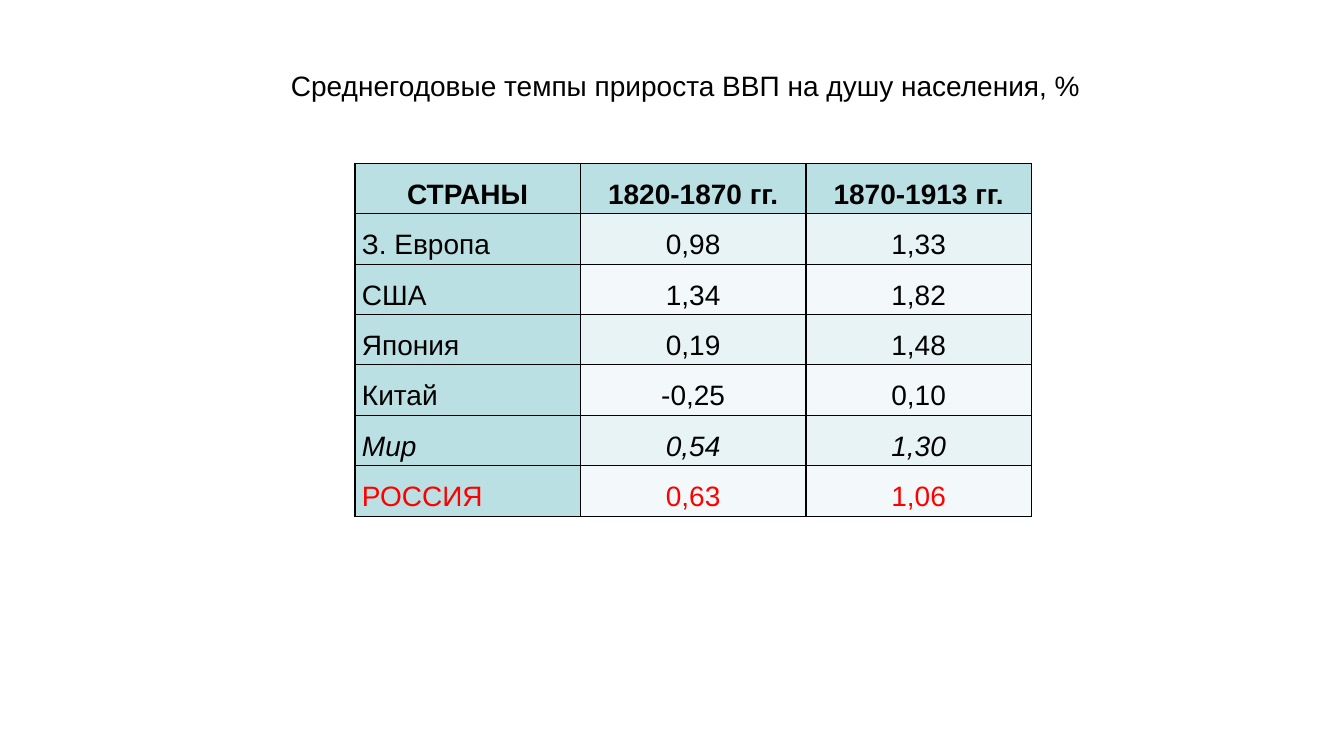
from lxml.etree import SubElement
from pptx import Presentation
from pptx.dml.color import RGBColor
from pptx.enum.text import MSO_ANCHOR, PP_ALIGN
from pptx.oxml.ns import qn
from pptx.util import Inches, Pt

ROWS = [
    ("СТРАНЫ", "1820-1870 гг.", "1870-1913 гг."),
    ("З. Европа", "0,98", "1,33"),
    ("США", "1,34", "1,82"),
    ("Япония", "0,19", "1,48"),
    ("Китай", "-0,25", "0,10"),
    ("Мир", "0,54", "1,30"),
    ("РОССИЯ", "0,63", "1,06"),
]
HEAD, ODD, EVEN = "BBE0E3", "E7F3F4", "F3F9FA"
BLACK, RED = "000000", "FF0000"


def rgb(value):
    return RGBColor.from_string(value)


def write(p, text, align=PP_ALIGN.CENTER, color=BLACK, bold=False, italic=False):
    p.text = text
    p.alignment = align
    p.font.name = "Arial"
    p.font.size = Pt(20)
    p.font.bold = bold
    p.font.italic = italic
    p.font.color.rgb = rgb(color)


def add_borders(cell):
    tc_pr = cell._tc.get_or_add_tcPr()
    for i, side in enumerate(("lnL", "lnR", "lnT", "lnB")):
        ln = SubElement(tc_pr, qn(f"a:{side}"), w=str(Pt(1)))
        fill = SubElement(ln, qn("a:solidFill"))
        SubElement(fill, qn("a:srgbClr"), val=BLACK)
        tc_pr.remove(ln)
        tc_pr.insert(i, ln)


def fill_cell(cell, row, col, text):
    is_label = col == 0 and row > 0
    cell.margin_left = cell.margin_right = Inches(0.07)
    cell.margin_top = cell.margin_bottom = 0
    cell.fill.solid()
    shade = HEAD if row == 0 or col == 0 else (ODD if row % 2 else EVEN)
    cell.fill.fore_color.rgb = rgb(shade)
    add_borders(cell)
    p = cell.text_frame.paragraphs[0]
    write(
        p,
        text,
        align=PP_ALIGN.JUSTIFY if is_label else PP_ALIGN.CENTER,
        color=RED if ROWS[row][0] == "РОССИЯ" else BLACK,
        bold=row == 0,
        italic=ROWS[row][0] == "Мир",
    )
    p.line_spacing = 1.5


def add_growth_table(s):
    table = s.shapes.add_table(
        len(ROWS), len(ROWS[0]), Inches(3.52), Inches(1.62), Inches(6.71), Inches(3.5)
    ).table
    table.first_row = table.horz_banding = False
    for row, values in enumerate(ROWS):
        for col, text in enumerate(values):
            fill_cell(table.cell(row, col), row, col, text)


def add_title(s, text):
    sp = s.shapes.add_textbox(Inches(2.76), Inches(0.63), Inches(8.08), Inches(0.44))
    tf = sp.text_frame
    tf.word_wrap = False
    tf.vertical_anchor = MSO_ANCHOR.MIDDLE
    write(tf.paragraphs[0], text)


def main():
    prs = Presentation()
    prs.slide_width = Inches(13.33)
    prs.slide_height = Inches(7.5)
    s = prs.slides.add_slide(prs.slide_layouts[6])
    add_growth_table(s)
    add_title(s, "Среднегодовые темпы прироста ВВП на душу населения, %")
    prs.save("out.pptx")


if __name__ == "__main__":
    main()
